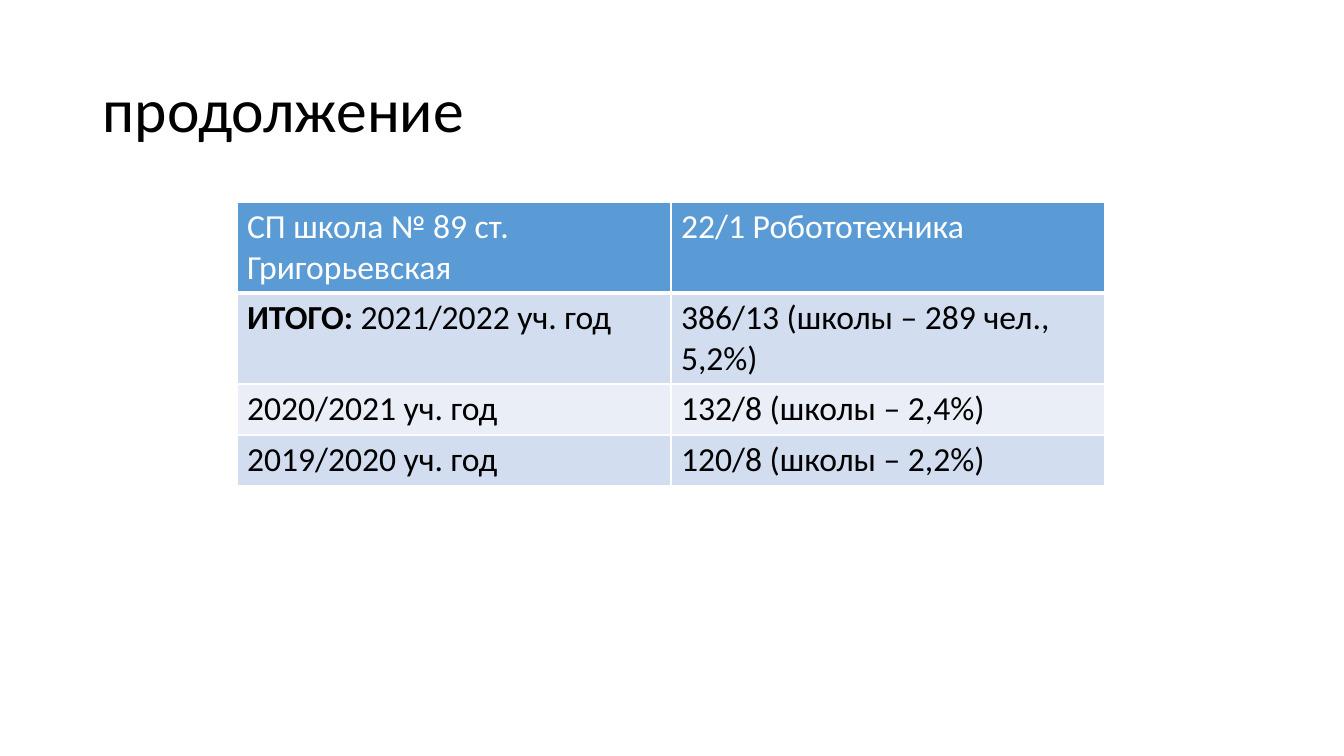
from lxml import etree
from pptx import Presentation
from pptx.dml.color import RGBColor
from pptx.enum.text import MSO_ANCHOR
from pptx.oxml.ns import qn
from pptx.util import Emu, Pt

MIDDLE = MSO_ANCHOR.MIDDLE
EMU_PER_PX = 914400 / 100.8
FONT = "Calibri"
COLORS = {
    "text": "000000",
    "white": "FFFFFF",
    "header": "5B9BD5",
    "band_dark": "D2DEEF",
    "band_light": "EAEFF7",
}

# Each cell is a list of (text, bold) runs
ROWS = [
    [[("СП школа № 89 ст. Григорьевская", False)], [("22/1 Робототехника", False)]],
    [[("ИТОГО: ", True), ("2021/2022 уч. год", False)],
     [("386/13 (школы – 289 чел., 5,2%)", False)]],
    [[("2020/2021 уч. год", False)], [("132/8 (школы – 2,4%)", False)]],
    [[("2019/2020 уч. год", False)], [("120/8 (школы – 2,2%)", False)]],
]
ROW_HEIGHTS = [91, 91, 51, 51]
COLUMN_WIDTH = 434


def px(length):
    return Emu(round(length * EMU_PER_PX))


def rgb(name):
    return RGBColor.from_string(COLORS[name])


def add_run(paragraph, text, size, color, bold=False):
    run = paragraph.add_run()
    run.text = text
    run.font.name = FONT
    run.font.size = Pt(size)
    run.font.bold = bold
    run.font.color.rgb = rgb(color)


def add_title(slide, text):
    box = slide.shapes.add_textbox(px(93), px(40), px(1159), px(146))
    frame = box.text_frame
    frame.word_wrap = True
    frame.vertical_anchor = MIDDLE
    paragraph = frame.paragraphs[0]
    paragraph.line_spacing = 0.9
    add_run(paragraph, text, 44, "text")


def set_borders(cell, bottom_width):
    """Draw white borders; line elements must come before the cell fill."""
    properties = cell._tc.get_or_add_tcPr()
    widths = {"a:lnL": 1, "a:lnR": 1, "a:lnT": 1, "a:lnB": bottom_width}
    for index, (tag, width) in enumerate(widths.items()):
        line = etree.Element(qn(tag), w=str(Pt(width)))
        fill = etree.SubElement(line, qn("a:solidFill"))
        etree.SubElement(fill, qn("a:srgbClr"), val=COLORS["white"])
        properties.insert(index, line)


def fill_cell(cell, runs, fill, color, bottom_width):
    cell.fill.solid()
    cell.fill.fore_color.rgb = rgb(fill)
    set_borders(cell, bottom_width)
    for text, bold in runs:
        add_run(cell.text_frame.paragraphs[0], text, 24, color, bold)


def add_school_table(slide):
    columns = len(ROWS[0])
    frame = slide.shapes.add_table(
        len(ROWS), columns, px(237), px(202),
        px(columns * COLUMN_WIDTH), px(sum(ROW_HEIGHTS)))
    table = frame.table
    table.horz_banding = False
    for column in table.columns:
        column.width = px(COLUMN_WIDTH)
    for row_index, cells in enumerate(ROWS):
        table.rows[row_index].height = px(ROW_HEIGHTS[row_index])
        if row_index == 0:
            look = ("header", "white", 3)
        else:
            look = ("band_dark" if row_index % 2 else "band_light", "text", 1)
        for column_index, runs in enumerate(cells):
            fill_cell(table.cell(row_index, column_index), runs, *look)


def main():
    presentation = Presentation()
    presentation.slide_width = px(1344)
    presentation.slide_height = px(756)
    slide = presentation.slides.add_slide(presentation.slide_layouts[6])

    # Heading
    add_title(slide, "продолжение")
    # Pupils by school and year
    add_school_table(slide)

    presentation.save("out.pptx")


if __name__ == "__main__":
    main()
